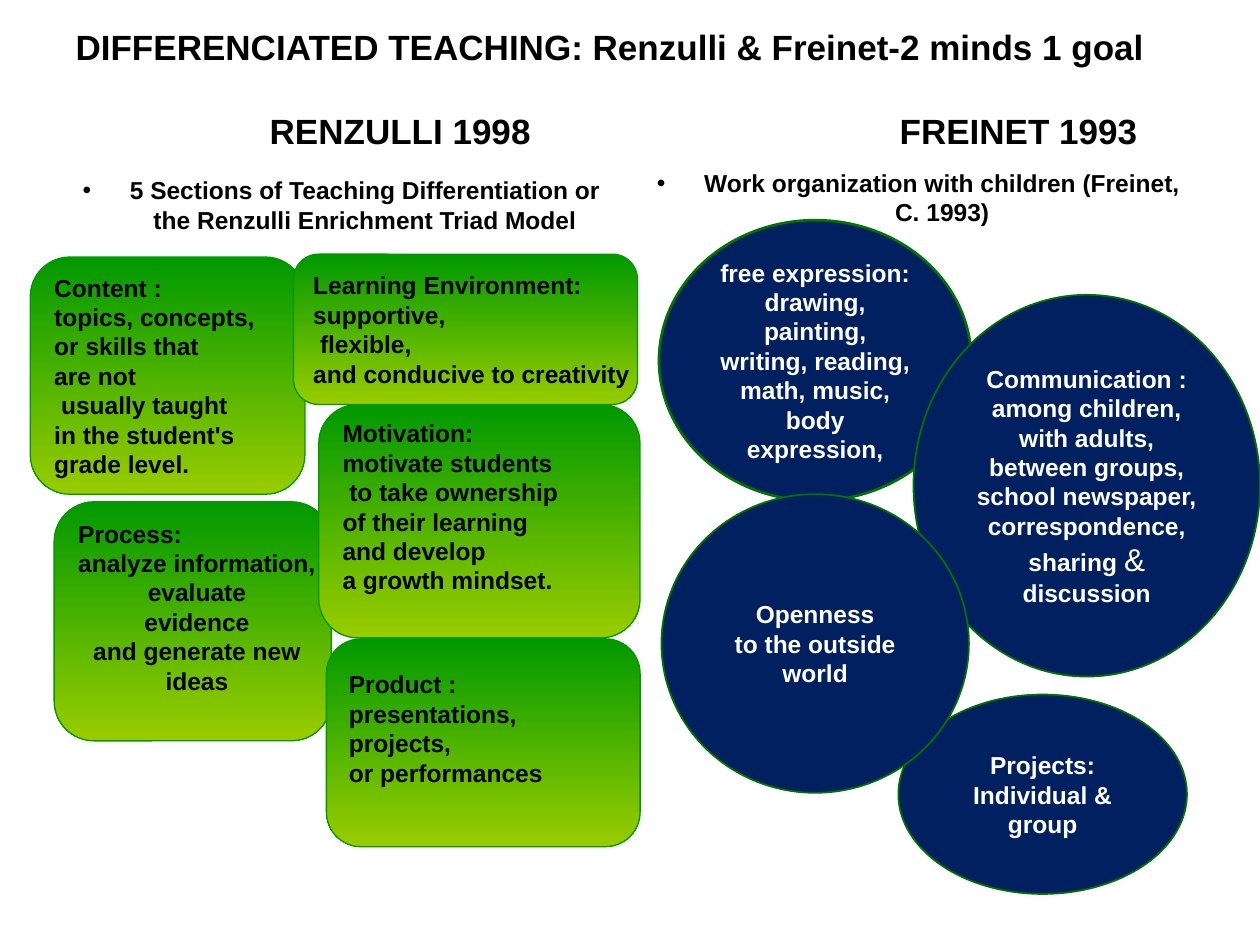
"""Build a slide that sets Renzulli's and Freinet's views of differentiated teaching side by side."""
from pptx import Presentation, util as u
from pptx.dml import color
from pptx.enum import shapes, text

deck = Presentation()
deck.slide_width, deck.slide_height = u.Inches(10), u.Inches(7.5)
col, row = deck.slide_width / 100, deck.slide_height / 100
slide = deck.slides.add_slide(deck.slide_layouts[4])
rgb = color.RGBColor.from_string
left, mid = text.PP_ALIGN.LEFT, text.PP_ALIGN.CENTER


def scale(spot):
    x, y, w, h = spot
    return [int(n) for n in (x * col, y * row, w * col, h * row)]


def write(shape, words, size, hue, align):
    frame = shape.text_frame
    frame.text = words
    frame.auto_size = text.MSO_AUTO_SIZE.NONE
    for para in frame.paragraphs:
        para.alignment = align
        para.space_before = u.Pt(0)
        for run in para.runs:
            font = run.font
            font.name, font.size, font.bold = "Arial", u.Pt(size), True
            font.color.rgb = rgb(hue)
    return frame


heads = [
    (0, (5, 0.7, 90, 8.5), 20, left, "DIFFERENCIATED TEACHING: Renzulli & Freinet-2 minds 1 goal"),
    (1, (20.4, 11.2, 25, 5.3), 20, left, "RENZULLI 1998"),
    (3, (70.4, 11.2, 25, 5.3), 20, left, "FREINET 1993"),
    (2, (5, 17.9, 44.2, 71.5), 14, mid,
     "5 Sections of Teaching Differentiation or the Renzulli Enrichment Triad Model"),
    (4, (50.8, 17.1, 44.2, 72.3), 14, mid, "Work organization with children (Freinet, C. 1993)"),
]
for key, spot, size, align, words in heads:
    hold = slide.placeholders[key]
    hold.left, hold.top, hold.width, hold.height = scale(spot)
    frame = write(hold, words, size, "000000", align)
    if size == 20:
        frame.vertical_anchor = text.MSO_ANCHOR.MIDDLE

cards = [
    ((2.4, 27.2, 21.8, 25.1), 0.05, left,
     "Content :\ntopics, concepts,\nor skills that\nare not\n usually taught\nin the student's\ngrade level."),
    ((4.3, 53.1, 22, 25.3), 0.28, mid,
     "Process:\nanalyze information,\nevaluate\nevidence\nand generate new\nideas"),
    ((25.3, 42.8, 25.5, 24.7), 0.28, left,
     "Motivation:\nmotivate students\n to take ownership\nof their learning\nand develop\na growth mindset."),
    ((25.9, 67.6, 24.9, 22), 0.28, left,
     "Product :\npresentations,\nprojects,\nor performances"),
    ((23.3, 26.9, 27.3, 15.9), 0.05, left,
     "Learning Environment:\nsupportive,\n flexible,\nand conducive to creativity"),
]
for spot, gap, align, words in cards:
    card = slide.shapes.add_shape(shapes.MSO_SHAPE.FLOWCHART_ALTERNATE_PROCESS, *scale(spot))
    card.shadow.inherit = False
    card.fill.gradient()
    card.fill.gradient_angle = 270
    for stop, hue in zip(card.fill.gradient_stops, ("009900", "99CC00")):
        stop.color.rgb = rgb(hue)
    card.line.color.rgb = rgb("009900")
    card.line.width = u.Pt(0.75)
    frame = write(card, words, 14, "000000", align)
    frame.paragraphs[0].alignment = left
    frame.word_wrap = False
    frame.margin_bottom = u.Inches(gap)
    frame.vertical_anchor = text.MSO_ANCHOR.MIDDLE

discs = [
    ((52.3, 23.3, 24.8, 29.7), 1.5,
     "free expression:\ndrawing, painting, writing, reading, math, music, body expression,"),
    ((71.3, 73.5, 22.9, 21.1), 1, "Projects: Individual & group"),
    ((72.5, 31.2, 27.5, 40.4), 1,
     "Communication :\namong children, with adults, between groups, school newspaper, correspondence, sharing "),
    ((52.5, 52.3, 24.4, 31.6), 1, "Openness\nto the outside world"),
]
for spot, width, words in discs:
    disc = slide.shapes.add_shape(shapes.MSO_SHAPE.OVAL, *scale(spot))
    disc.shadow.inherit = False
    disc.fill.solid()
    disc.fill.fore_color.rgb = rgb("002060")
    disc.line.color.rgb = rgb("007300")
    disc.line.width = u.Pt(width)
    frame = write(disc, words, 14, "FFFFFF", mid)
    frame.word_wrap = True
    frame.vertical_anchor = text.MSO_ANCHOR.MIDDLE
    if words.startswith("Communication"):
        for part, size, bold in (("& ", 18, False), ("discussion", 14, True)):
            run = frame.paragraphs[-1].add_run()
            run.text = part
            font = run.font
            font.name, font.size, font.bold = "Arial", u.Pt(size), bold
            font.color.rgb = rgb("FFFFFF")

deck.save("out.pptx")
